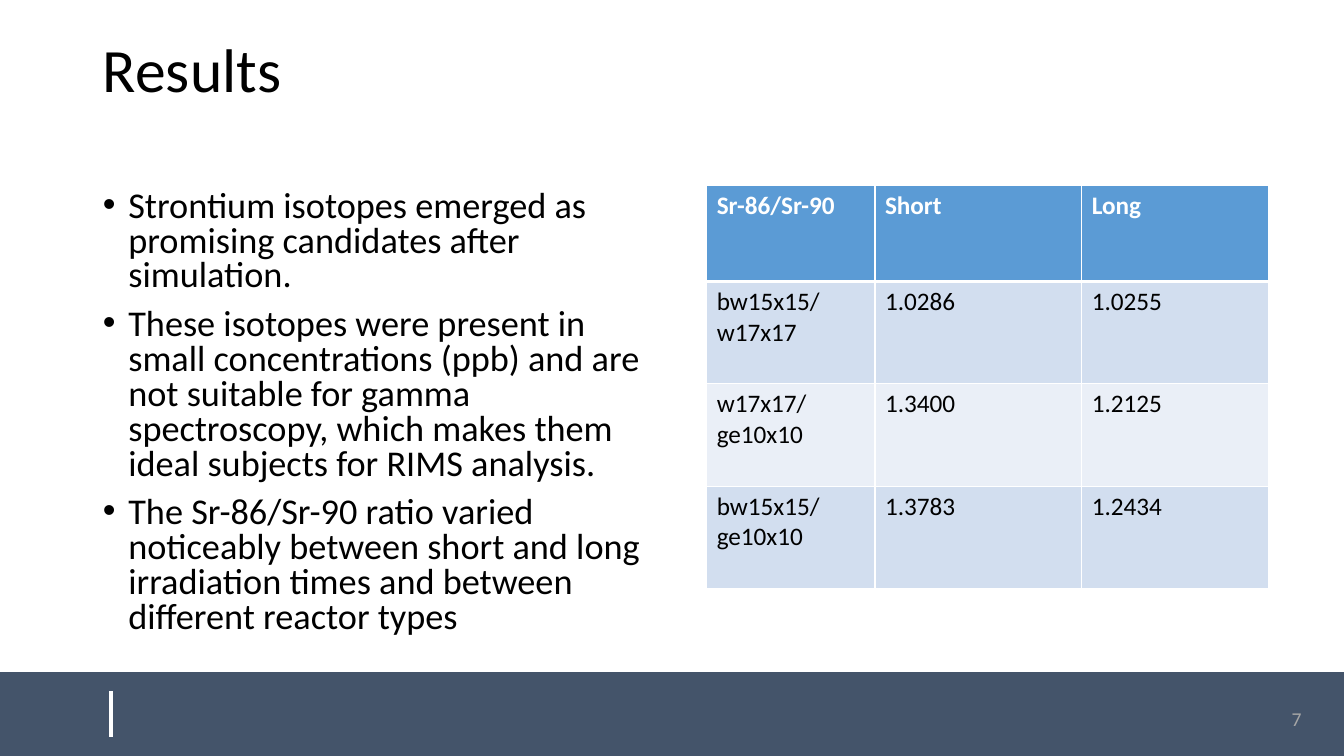
"""Build the results slide on strontium isotope ratios."""
from lxml import etree
from pptx import Presentation
from pptx.dml.color import RGBColor
from pptx.enum.shapes import MSO_CONNECTOR, MSO_SHAPE
from pptx.enum.text import MSO_ANCHOR, MSO_AUTO_SIZE, PP_ALIGN
from pptx.oxml.ns import qn
from pptx.util import Cm, Pt

STRAIGHT = MSO_CONNECTOR.STRAIGHT
RECTANGLE = MSO_SHAPE.RECTANGLE
TOP, MIDDLE = MSO_ANCHOR.TOP, MSO_ANCHOR.MIDDLE
NO_FIT = MSO_AUTO_SIZE.NONE
LEFT, RIGHT = PP_ALIGN.LEFT, PP_ALIGN.RIGHT

FONT = "Calibri"
COLORS = {
    "text": "000000",
    "white": "FFFFFF",
    "footer": "44546A",
    "number": "A6A6A6",
    "header": "5B9BD5",
    "odd_row": "D2DEEF",
    "even_row": "EAEFF7",
}
SLIDE_WIDTH, SLIDE_HEIGHT = 33.87, 19.05
FOOTER_TOP = 16.94
CONTENT_LEFT, CONTENT_TOP = 2.34, 4.67

FINDINGS = [
    "Strontium isotopes emerged as promising candidates after simulation.",
    "These isotopes were present in small concentrations (ppb) and are not suitable "
    "for gamma spectroscopy, which makes them ideal subjects for RIMS analysis.",
    "The Sr-86/Sr-90 ratio varied noticeably between short and long irradiation "
    "times and between different reactor types",
]
RATIOS = [
    ["Sr-86/Sr-90", "Short", "Long"],
    ["bw15x15/\nw17x17", "1.0286", "1.0255"],
    ["w17x17/\nge10x10", "1.3400", "1.2125"],
    ["bw15x15/\nge10x10", "1.3783", "1.2434"],
]
COLUMN_WIDTHS = [4.24, 5.21, 4.72]
ROW_HEIGHTS = [2.42, 2.58, 2.58, 2.58]


def color(name):
    """Return the named colour."""
    return RGBColor.from_string(COLORS[name])


def style(para, size, color_name="text", bold=False, align=LEFT):
    """Set the font and alignment of a paragraph."""
    para.alignment = align
    para.font.name = FONT
    para.font.size = Pt(size)
    para.font.bold = bold
    para.font.color.rgb = color(color_name)


def place(shape, left, top, width, height):
    """Move and size a shape, in centimetres."""
    shape.left, shape.top = Cm(left), Cm(top)
    shape.width, shape.height = Cm(width), Cm(height)


def add_footer(page, number):
    """Add the footer band, its upright rule and the page number."""
    band = page.shapes.add_shape(RECTANGLE, 0, Cm(FOOTER_TOP), Cm(SLIDE_WIDTH),
                                 Cm(SLIDE_HEIGHT - FOOTER_TOP))
    band.shadow.inherit = False
    band.fill.solid()
    band.fill.fore_color.rgb = color("footer")
    band.line.fill.background()

    rule = page.shapes.add_connector(STRAIGHT, Cm(2.79), Cm(17.42), Cm(2.79), Cm(18.57))
    rule.line.color.rgb = color("white")
    rule.line.width = Pt(3)
    etree.SubElement(rule._element.spPr, qn("a:effectLst"))

    box = page.shapes.add_textbox(Cm(25.43), Cm(17.6), Cm(7.62), Cm(1.02))
    box.text_frame.word_wrap = True
    box.text_frame.vertical_anchor = MIDDLE
    box.text_frame.text = number
    style(box.text_frame.paragraphs[0], 14, "number", align=RIGHT)


def fill_title(title, text):
    """Place and format the slide title."""
    place(title, CONTENT_LEFT, 0, 31.53, 3.68)
    title.text_frame.auto_size = NO_FIT
    title.text_frame.vertical_anchor = MIDDLE
    title.text_frame.text = text
    para = title.text_frame.paragraphs[0]
    para.line_spacing = 0.9
    style(para, 44)


def add_bullet(para):
    """Give a paragraph a hanging round bullet."""
    properties = para._p.get_or_add_pPr()
    properties.set("marL", str(Cm(0.64)))
    properties.set("indent", str(Cm(-0.64)))
    etree.SubElement(properties, qn("a:buFont"), typeface="Arial")
    etree.SubElement(properties, qn("a:buChar"), char="•")


def fill_body(body, items):
    """Place the body and write its bulleted list."""
    place(body, CONTENT_LEFT, CONTENT_TOP, 14.6, 12.09)
    frame = body.text_frame
    frame.auto_size = NO_FIT
    frame.vertical_anchor = TOP
    frame.text = "\n".join(items)
    for index, para in enumerate(frame.paragraphs):
        add_bullet(para)
        para.line_spacing = 0.8
        para.space_before = Pt(10 if index else 0)
        style(para, 25.9)


def add_border(cell, side, points):
    """Draw one white border of a cell."""
    properties = cell._tc.get_or_add_tcPr()
    line = etree.SubElement(properties, qn(f"a:ln{side}"), w=str(Pt(points)))
    fill = etree.SubElement(line, qn("a:solidFill"))
    etree.SubElement(fill, qn("a:srgbClr"), val=COLORS["white"])


def format_cell(cell, text, row):
    """Write a cell and set its borders, fill and font by row."""
    cell.text = text
    for side in "LRTB":
        under_header = (row, side) in ((0, "B"), (1, "T"))
        add_border(cell, side, 3 if under_header else 1)
    fill_name = "header" if row == 0 else "odd_row" if row % 2 else "even_row"
    cell.fill.solid()
    cell.fill.fore_color.rgb = color(fill_name)
    for para in cell.text_frame.paragraphs:
        style(para, 18, "text" if row else "white", bold=row == 0)


def add_ratio_table(page, rows):
    """Add the table of isotope ratios."""
    frame = page.shapes.add_table(len(rows), len(COLUMN_WIDTHS), Cm(17.81), Cm(CONTENT_TOP),
                                  Cm(sum(COLUMN_WIDTHS)), Cm(sum(ROW_HEIGHTS)))
    table = frame.table
    for column, width in zip(table.columns, COLUMN_WIDTHS):
        column.width = Cm(width)
    for index, values in enumerate(rows):
        table.rows[index].height = Cm(ROW_HEIGHTS[index])
        for cell, text in zip(table.rows[index].cells, values):
            format_cell(cell, text, index)


def main():
    """Build and save the deck."""
    deck = Presentation()
    deck.slide_width, deck.slide_height = Cm(SLIDE_WIDTH), Cm(SLIDE_HEIGHT)
    page = deck.slides.add_slide(deck.slide_layouts[1])
    add_footer(page, "7")
    fill_title(page.shapes.title, "Results")
    fill_body(page.placeholders[1], FINDINGS)
    add_ratio_table(page, RATIOS)
    deck.save("out.pptx")


if __name__ == "__main__":
    main()
